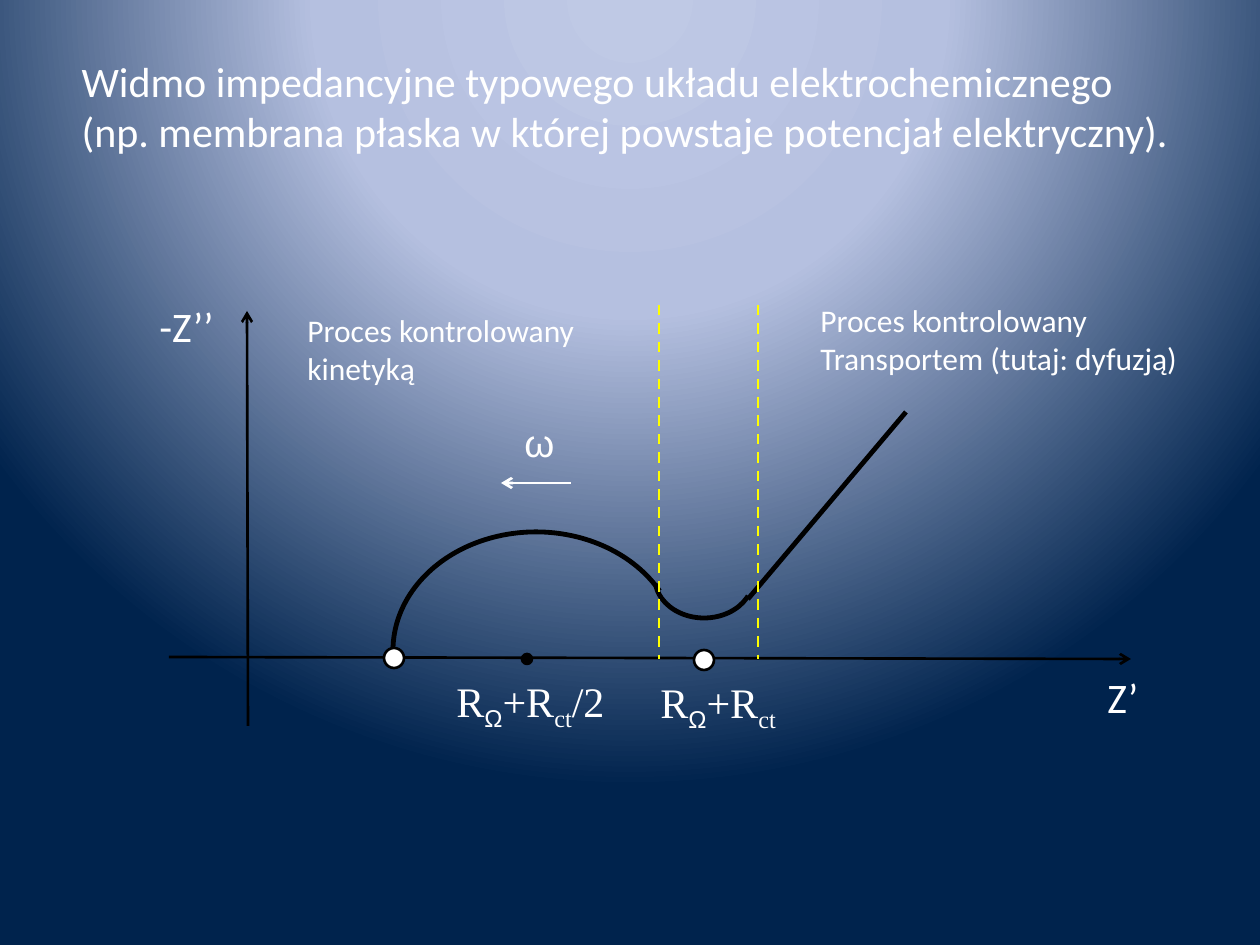
from dataclasses import dataclass

from lxml import etree
from pptx import Presentation
from pptx.dml.color import RGBColor
from pptx.enum.dml import MSO_LINE
from pptx.enum.shapes import MSO_CONNECTOR, MSO_SHAPE
from pptx.enum.text import MSO_ANCHOR, MSO_AUTO_SIZE, PP_ALIGN
from pptx.oxml import parse_xml
from pptx.oxml.ns import nsdecls, qn
from pptx.util import Emu, Pt

STRAIGHT = MSO_CONNECTOR.STRAIGHT
ARC, OVAL = MSO_SHAPE.ARC, MSO_SHAPE.OVAL
DASH = MSO_LINE.DASH
LEFT, TOP = PP_ALIGN.LEFT, MSO_ANCHOR.TOP
GROW = MSO_AUTO_SIZE.SHAPE_TO_FIT_TEXT
PX = 914400 / 126


@dataclass(frozen=True)
class Theme:
    white: str = "FFFFFF"
    black: str = "000000"
    yellow: str = "FFFF00"
    glow: tuple = ((0, "BFC9E5"), (40, "B5C0E0"), (100, "00234D"))
    sans: str = "Calibri"
    greek: str = "Arial"
    serif: str = "Times New Roman"
    large: int = 24
    omega: int = 22
    note: int = 18
    thin: float = 1.5
    thick: float = 2.75


theme = Theme()


def write(box, lines, size=theme.large, font=theme.sans, wrap=False):
    """Fill a box; each line is a string or a list of (text, font, is_subscript)."""
    frame = box.text_frame
    frame.word_wrap = wrap
    frame.auto_size = GROW
    frame.vertical_anchor = TOP
    for index, line in enumerate(lines):
        para = frame.add_paragraph() if index else frame.paragraphs[0]
        para.alignment = LEFT
        for text, face, subscript in [(line, font, False)] if isinstance(line, str) else line:
            span = para.add_run()
            span.text = text
            span.font.name = face
            span.font.size = Pt(size)
            span.font.color.rgb = RGBColor.from_string(theme.white)
            if subscript:
                span._r.get_or_add_rPr().set("baseline", "-25000")


def draw_line(start, end, color=theme.black, width=theme.thin, arrow=False, dash=None):
    points = [Emu(round(value * PX)) for value in (*start, *end)]
    line = page.shapes.add_connector(STRAIGHT, *points)
    line.line.color.rgb = RGBColor.from_string(color)
    line.line.width = Pt(width)
    if dash:
        line.line.dash_style = dash
    if arrow:
        etree.SubElement(line.line._get_or_add_ln(), qn("a:tailEnd"), type="arrow")
    etree.SubElement(line._element.spPr, qn("a:effectLst"))


deck = Presentation()
deck.slide_width, deck.slide_height = Emu(round(1260 * PX)), Emu(round(945 * PX))
page = deck.slides.add_slide(deck.slide_layouts[5])

# Radial background
stops = "".join(
    f'<a:gs pos="{place * 1000}"><a:srgbClr val="{color}"/></a:gs>' for place, color in theme.glow
)
page._element.cSld.insert(0, parse_xml(
    f'<p:bg {nsdecls("p", "a")}><p:bgPr><a:gradFill rotWithShape="1"><a:gsLst>{stops}</a:gsLst>'
    '<a:path path="circle"><a:fillToRect l="50000" t="-80000" r="50000" b="180000"/></a:path>'
    '</a:gradFill><a:effectLst/></p:bgPr></p:bg>'
))

# Title
title = page.shapes.title
title.left, title.top, title.width, title.height = [
    Emu(round(value * PX)) for value in (69, 49, 1131, 115)
]
write(title, ["Widmo impedancyjne typowego układu elektrochemicznego "
              "(np. membrana płaska w której powstaje potencjał elektryczny)."], wrap=True)

# Semicircle and the dip that follows it
for place, angles, rotation in [
    ((393, 532, 286, 237), (106.44, 200.58), 0),
    ((655, 539, 98, 79), (120.93, 212.22), 180),
]:
    arc = page.shapes.add_shape(ARC, *[Emu(round(value * PX)) for value in place])
    arc.adjustments[0], arc.adjustments[1] = angles
    arc.rotation = rotation
    arc.shadow.inherit = False
    arc.fill.background()
    arc.line.color.rgb = RGBColor.from_string(theme.black)
    arc.line.width = Pt(theme.thick)

# Axes, frequency arrow, diffusion branch
draw_line((169, 657), (1131, 659), arrow=True)
draw_line((248, 726), (247, 311), arrow=True)
draw_line((571, 483), (501, 483), color=theme.white, arrow=True)
draw_line((748, 599), (906, 412), width=theme.thick)

# Points on the real axis
for left, top, size, color in [
    (694, 650, 20, theme.white),
    (384, 648, 20, theme.white),
    (522, 654, 10, theme.black),
]:
    dot = page.shapes.add_shape(OVAL, *[Emu(round(value * PX)) for value in (left, top, size, size)])
    dot.shadow.inherit = False
    dot.fill.solid()
    dot.fill.fore_color.rgb = RGBColor.from_string(color)
    dot.line.color.rgb = RGBColor.from_string(theme.black)
    dot.line.width = Pt(theme.thin)

# Borders between the kinetic and diffusion regions
for x in (659, 758):
    draw_line((x, 305), (x, 659), color=theme.yellow, dash=DASH)

# Labels
resistance = [("R", theme.serif, False), ("Ω", theme.greek, True),
              ("+R", theme.serif, False), ("ct", theme.serif, True)]
half_resistance = resistance + [("/2", theme.serif, False)]
for place, lines, style in [
    ((147, 294, 81, 63), ["-Z’’"], {}),
    ((1095, 665, 57, 63), ["Z’"], {}),
    ((512, 413, 52, 59), ["ω"], {"size": theme.omega, "font": theme.greek}),
    ((444, 669, 237, 63), [half_resistance], {"wrap": True}),
    ((648, 670, 237, 63), [resistance], {"wrap": True}),
    ((295, 305, 295, 89), ["Proces kontrolowany", "kinetyką"], {"size": theme.note}),
    ((808, 295, 386, 89), ["Proces kontrolowany", "Transportem (tutaj: dyfuzją)"],
     {"size": theme.note}),
]:
    label = page.shapes.add_textbox(*[Emu(round(value * PX)) for value in place])
    write(label, lines, **style)

deck.save("out.pptx")
